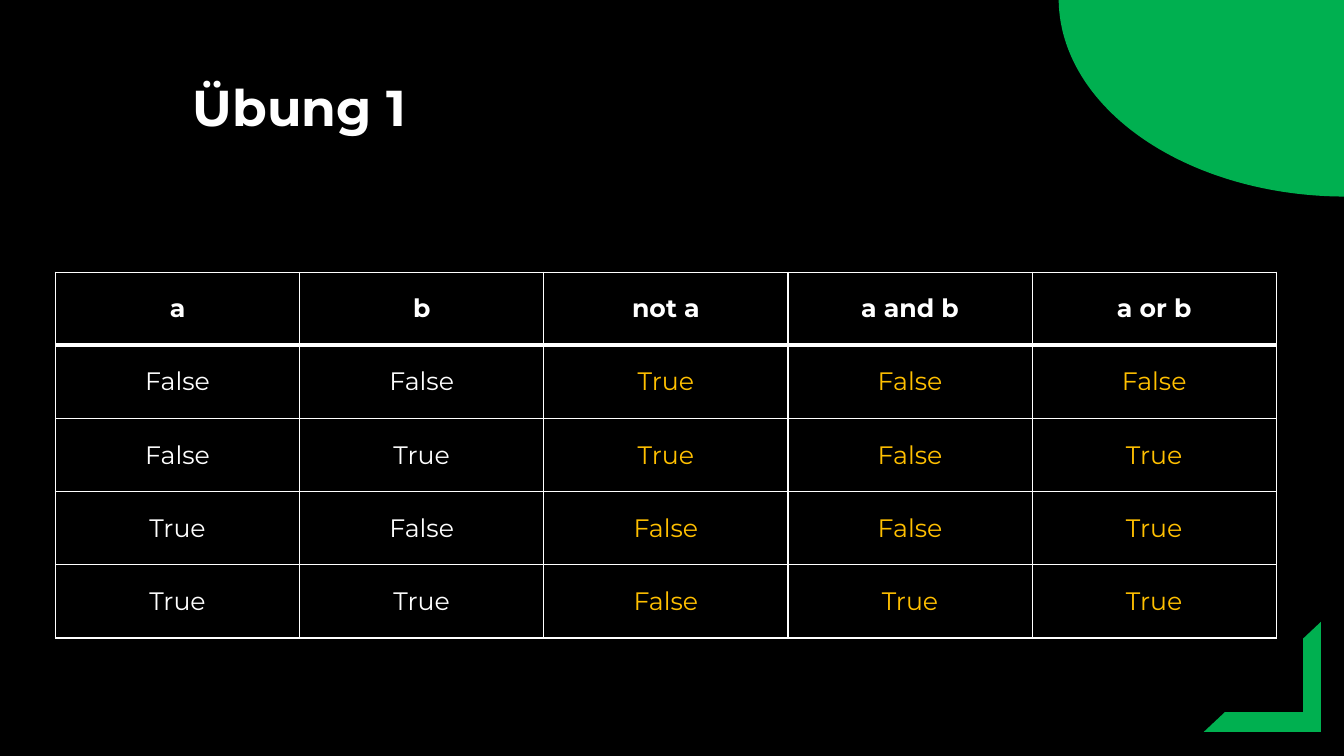
from dataclasses import dataclass
from itertools import product

from lxml import etree
from pptx import Presentation
from pptx.dml.color import RGBColor
from pptx.enum.shapes import MSO_SHAPE
from pptx.enum.text import MSO_ANCHOR, MSO_AUTO_SIZE, PP_ALIGN
from pptx.oxml.ns import qn
from pptx.util import Inches, Pt

HALF_FRAME, PIE = MSO_SHAPE.HALF_FRAME, MSO_SHAPE.PIE
TOP, MIDDLE = MSO_ANCHOR.TOP, MSO_ANCHOR.MIDDLE
LEFT, CENTER = PP_ALIGN.LEFT, PP_ALIGN.CENTER
NO_AUTOFIT = MSO_AUTO_SIZE.NONE
TITLE_ONLY = 5


@dataclass(frozen=True)
class Theme:
    font: str = "Montserrat"
    background: str = "000000"
    text: str = "FFFFFF"
    accent: str = "00B050"
    solution: str = "FFC000"
    title_size: int = 36
    table_size: int = 18
    grid_width: int = 1
    header_rule_width: int = 3


class ExerciseSlide:
    def __init__(self, presentation, theme):
        self.theme = theme
        self.slide = presentation.slides.add_slide(
            presentation.slide_layouts[TITLE_ONLY])
        background = self.slide.background.fill
        background.solid()
        background.fore_color.rgb = RGBColor.from_string(theme.background)

    def add_run(self, paragraph, text, size, color, bold=False):
        run = paragraph.add_run()
        run.text = text
        run.font.name = self.theme.font
        run.font.size = Pt(size)
        run.font.bold = bold
        run.font.color.rgb = RGBColor.from_string(color)

    def add_ornament(self, preset, left, top, width, height, adjustments, rotation=0):
        ornament = self.slide.shapes.add_shape(
            preset, Inches(left), Inches(top), Inches(width), Inches(height))
        for index, value in enumerate(adjustments):
            ornament.adjustments[index] = value
        ornament.rotation = rotation
        ornament.shadow.inherit = False
        ornament.fill.solid()
        ornament.fill.fore_color.rgb = RGBColor.from_string(self.theme.accent)
        ornament.line.fill.background()

    def set_title(self, text, left, top, width, height):
        title = self.slide.shapes.title
        title.left, title.top = Inches(left), Inches(top)
        title.width, title.height = Inches(width), Inches(height)
        frame = title.text_frame
        frame.auto_size = NO_AUTOFIT
        frame.word_wrap = True
        frame.vertical_anchor = TOP
        paragraph = frame.paragraphs[0]
        paragraph.alignment = LEFT
        paragraph.line_spacing = 0.9
        self.add_run(paragraph, text, self.theme.title_size, self.theme.text, bold=True)

    def add_border(self, cell, side, width):
        """Draw one side of a cell: L, R, T or B, in that order."""
        properties = cell._tc.get_or_add_tcPr()
        border = etree.SubElement(properties, qn(f"a:ln{side}"), w=str(Pt(width)))
        fill = etree.SubElement(border, qn("a:solidFill"))
        etree.SubElement(fill, qn("a:srgbClr"), val=self.theme.text)

    def fill_cell(self, cell, text, color, bold, widths):
        cell.vertical_anchor = MIDDLE
        for side, width in widths.items():
            self.add_border(cell, side, width)
        cell.fill.background()
        paragraph = cell.text_frame.paragraphs[0]
        paragraph.alignment = CENTER
        self.add_run(paragraph, text, self.theme.table_size, color, bold)

    def add_truth_table(self, headings, rows, given_count, left, top, width, height):
        """Columns after the first given_count hold solutions."""
        lines = [headings, *rows]
        table = self.slide.shapes.add_table(
            len(lines), len(headings),
            Inches(left), Inches(top), Inches(width), Inches(height)).table
        table.first_row = True
        table.horz_banding = False
        for row_index, line in enumerate(lines):
            is_header = row_index == 0
            widths = dict.fromkeys("LRTB", self.theme.grid_width)
            if is_header:
                widths["B"] = self.theme.header_rule_width
            elif row_index == 1:
                widths["T"] = self.theme.header_rule_width
            for column, value in enumerate(line):
                is_solution = not is_header and column >= given_count
                color = self.theme.solution if is_solution else self.theme.text
                self.fill_cell(table.cell(row_index, column), str(value),
                               color, is_header, widths)


def main():
    presentation = Presentation()
    presentation.slide_width = Inches(13.33)
    presentation.slide_height = Inches(7.5)

    exercise = ExerciseSlide(presentation, Theme())
    exercise.add_ornament(HALF_FRAME, 11.94, 6.17, 1.16, 1.09, (0.18, 0.16), rotation=180)
    exercise.add_ornament(PIE, 10.5, -1.98, 5.69, 3.93, (54, 108))
    exercise.set_title("Übung 1", 1.81, 0.77, 10.85, 0.71)

    headings = ("a", "b", "not a", "a and b", "a or b")
    rows = [(a, b, not a, a and b, a or b)
            for a, b in product((False, True), repeat=2)]
    exercise.add_truth_table(headings, rows, 2, 0.55, 2.7, 12.11, 3.63)

    presentation.save("out.pptx")


if __name__ == "__main__":
    main()
